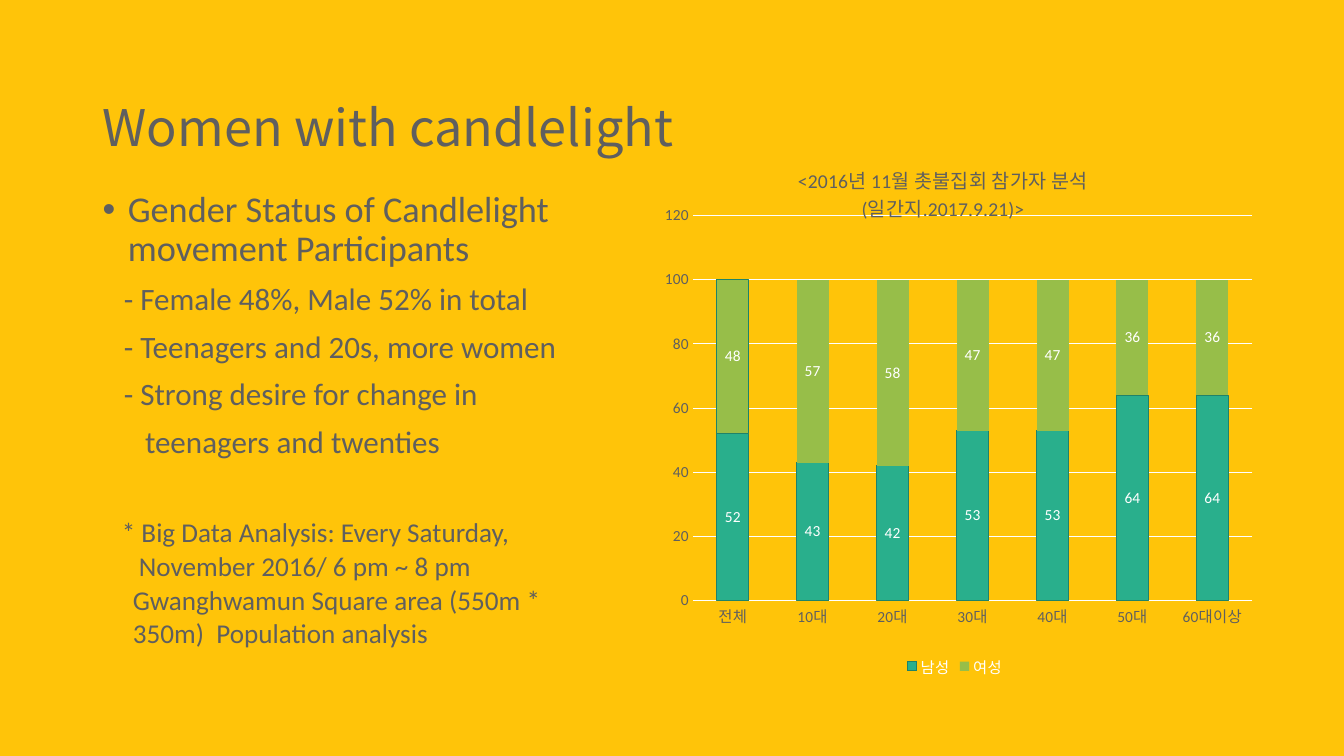
from lxml import etree
from pptx import Presentation
from pptx.chart.data import CategoryChartData
from pptx.dml.color import RGBColor
from pptx.enum.chart import XL_CHART_TYPE, XL_LABEL_POSITION, XL_LEGEND_POSITION, XL_TICK_MARK
from pptx.enum.text import MSO_ANCHOR, PP_ALIGN
from pptx.oxml import parse_xml
from pptx.util import Inches, Pt

STACKED = XL_CHART_TYPE.COLUMN_STACKED
CENTER = XL_LABEL_POSITION.CENTER
BOTTOM = XL_LEGEND_POSITION.BOTTOM
NO_TICK = XL_TICK_MARK.NONE
MIDDLE, TOP = MSO_ANCHOR.MIDDLE, MSO_ANCHOR.TOP
MID = PP_ALIGN.CENTER
NS_A = "http://schemas.openxmlformats.org/drawingml/2006/main"
NS_C = "http://schemas.openxmlformats.org/drawingml/2006/chart"
GOLD, GRAY, WHITE = "FFC409", "5F5F5F", "FFFFFF"
TEAL, DARK, GREEN = "29AF8C", "1F8369", "97BE49"


def color(text):
    return RGBColor.from_string(text)


def layout(spots, inner=False):
    root = etree.Element(f"{{{NS_C}}}layout", nsmap={"c": NS_C})
    manual = etree.SubElement(root, f"{{{NS_C}}}manualLayout")
    pairs = [("layoutTarget", "inner")] if inner else []
    pairs += [("xMode", "edge"), ("yMode", "edge"), *spots.items()]
    for name, value in pairs:
        etree.SubElement(manual, f"{{{NS_C}}}{name}").set("val", str(value))
    return parse_xml(etree.tostring(root))


class Deck:
    """Holds the slide style and draws each kind of element."""

    def __init__(self):
        self.prs = Presentation()
        self.prs.slide_width, self.prs.slide_height = Inches(13.33), Inches(7.5)
        self.slide = self.prs.slides.add_slide(self.prs.slide_layouts[6])
        fill = self.slide.background.fill
        fill.solid()
        fill.fore_color.rgb = color(GOLD)

    def style(self, font, size, tint=GRAY, face="Calibri"):
        font.size, font.name, font.bold = Pt(size), face, False
        font.color.rgb = color(tint)

    def frame(self, left, top, width, height, anchor=TOP):
        box = self.slide.shapes.add_textbox(Inches(left), Inches(top), Inches(width), Inches(height))
        box.text_frame.word_wrap = True
        box.text_frame.vertical_anchor = anchor
        return box.text_frame

    def para(self, frame, text, size, indent=0, space=0.9, before=10, face="Calibri", bullet=False):
        first = frame.paragraphs[0]
        para = first if not first.runs else frame.add_paragraph()
        para.line_spacing, para.space_before = space, Pt(before)
        props = para._p.get_or_add_pPr()
        props.set("marL", str(Inches(indent)))
        if bullet:
            props.set("indent", str(-Inches(indent)))
            etree.SubElement(props, f"{{{NS_A}}}buFont").set("typeface", "Arial")
            etree.SubElement(props, f"{{{NS_A}}}buChar").set("char", "•")
        run = para.add_run()
        run.text = text
        self.style(run.font, size, face=face)

    def line(self, line, tint):
        line.color.rgb = color(tint)
        line.width = Pt(0.75)

    def axis(self, axis):
        axis.major_tick_mark = axis.minor_tick_mark = NO_TICK
        self.style(axis.tick_labels.font, 11)

    def chart(self, left, top, width, height, cats, rows, title):
        data = CategoryChartData()
        data.categories = cats
        for name, values, _ in rows:
            data.add_series(name, values)
        chart = self.slide.shapes.add_chart(
            STACKED, Inches(left), Inches(top), Inches(width), Inches(height), data).chart
        self.style(chart.font, 10, WHITE)
        plot = chart.plots[0]
        plot.gap_width, plot.overlap, plot.vary_by_categories = 150, 100, False
        for series, (_, _, tint) in zip(plot.series, rows):
            series.format.fill.solid()
            series.format.fill.fore_color.rgb = color(tint)
            labels = series.data_labels
            labels.show_value, labels.position = True, CENTER
            self.style(labels.font, 11, WHITE)
        self.line(plot.series[0].format.line, DARK)
        point = plot.series[1].points[0].format
        point.fill.solid()
        point.fill.fore_color.rgb = color(GREEN)
        self.line(point.line, DARK)
        base, scale = chart.category_axis, chart.value_axis
        self.axis(base)
        self.axis(scale)
        self.line(base.format.line, WHITE)
        scale.format.line.fill.background()
        scale.minimum_scale, scale.maximum_scale, scale.major_unit = 0, 120, 20
        self.line(scale.major_gridlines.format.line, WHITE)
        chart.has_legend = True
        chart.legend.position, chart.legend.include_in_layout = BOTTOM, False
        self.style(chart.legend.font, 11, WHITE)
        self.head(chart, title)
        self.place(chart)

    def head(self, chart, lines):
        chart.has_title = True
        frame = chart.chart_title.text_frame
        for i, text in enumerate(lines):
            para = frame.add_paragraph() if i else frame.paragraphs[0]
            para.alignment = MID
            run = para.add_run()
            run.text = text
            self.style(run.font, 14)

    def place(self, chart):
        root = chart._chartSpace
        area = root.xpath("c:chart/c:plotArea")[0]
        title = root.xpath("c:chart/c:title")[0]
        for old in area.xpath("c:layout") + title.xpath("c:layout"):
            old.getparent().remove(old)
        area.insert(0, layout({"x": 0.074, "y": 0.133, "w": 0.91, "h": 0.717}, True))
        title.xpath("c:tx")[0].addnext(layout({"x": 0.24, "y": 0.03}))
        for mark in title.xpath("c:overlay"):
            mark.set("val", "1")


def main():
    deck = Deck()
    title = deck.frame(0.92, 0.74, 11.5, 1.1, MIDDLE)
    deck.para(title, "Women with candlelight", 36, before=0, face="Noto Sans CJK KR")
    body = deck.frame(0.92, 1.85, 4.76, 4.91)
    deck.para(body, "Gender Status of Candlelight movement Participants", 25.9, 0.25, bullet=True)
    for text, indent in [
        ("- Female 48%, Male 52% in total", 0.21),
        ("- Teenagers and 20s, more women", 0.21),
        ("- Strong desire for change in", 0.21),
        ("teenagers and twenties", 0.42),
    ]:
        deck.para(body, text, 22.2, indent)
    for text, indent, before in [
        ("* Big Data Analysis: Every Saturday,", 0.19, 48),
        ("November 2016/ 6 pm ~ 8 pm", 0.36, 10),
        ("Gwanghwamun Square area (550m *", 0.3, 10),
        ("350m)  Population analysis", 0.3, 10),
    ]:
        deck.para(body, text, 19.4, indent, 0.6, before)
    cats = ["전체", "10대", "20대", "30대", "40대", "50대", "60대이상"]
    rows = [
        ("남성", (52, 43, 42, 53, 53, 64, 64), TEAL),
        ("여성", (48, 57, 58, 47, 47, 36, 36), GREEN),
    ]
    heading = ["<2016년 11월 촛불집회 참가자 분석", "(일간지.2017.9.21)>"]
    deck.chart(6.42, 1.43, 6.1, 5.33, cats, rows, heading)
    deck.prs.save("out.pptx")


if __name__ == "__main__":
    main()
